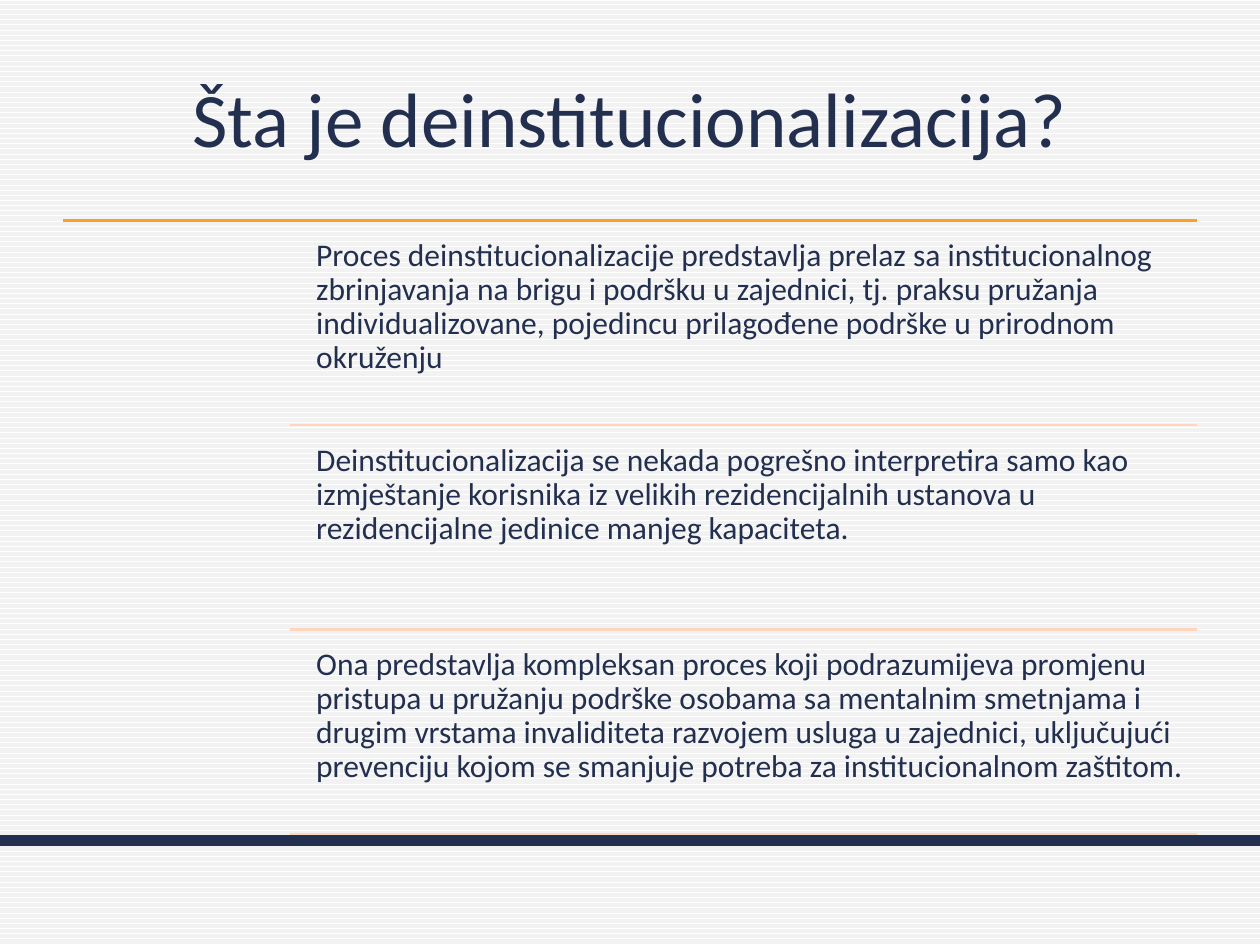
from dataclasses import dataclass

from lxml import etree
from pptx import Presentation
from pptx.dml.color import RGBColor
from pptx.enum.dml import MSO_PATTERN
from pptx.enum.shapes import MSO_CONNECTOR
from pptx.enum.text import MSO_ANCHOR, PP_ALIGN
from pptx.oxml.ns import qn
from pptx.util import Inches, Pt


@dataclass(frozen=True)
class Theme:
    font: str = "Calibri"
    title_size: float = 44
    body_size: float = 18
    navy: str = "232F4E"
    orange: str = "FDA023"
    peach: str = "FED6BD"
    stripe: str = "F2F2F2"
    paper: str = "FFFFFF"
    rule_width: float = 1.5
    footer_width: float = 6


THEME = Theme()

TITLE = "Šta je deinstitucionalizacija?"
STATEMENTS = [
    "Proces deinstitucionalizacije predstavlja prelaz sa institucionalnog "
    "zbrinjavanja na brigu i podršku u zajednici, tj. praksu pružanja "
    "individualizovane, pojedincu prilagođene podrške u prirodnom okruženju",
    "Deinstitucionalizacija se nekada pogrešno interpretira samo kao "
    "izmještanje korisnika iz velikih rezidencijalnih ustanova u "
    "rezidencijalne jedinice manjeg kapaciteta.",
    "Ona predstavlja kompleksan proces koji podrazumijeva promjenu pristupa "
    "u pružanju podrške osobama sa mentalnim smetnjama i drugim vrstama "
    "invaliditeta razvojem usluga u zajednici, uključujući prevenciju kojom "
    "se smanjuje potreba za institucionalnom zaštitom.",
]


def set_all(target, formats):
    for name, value in formats.items():
        setattr(target, name, value)


def write(frame, text, size, frame_format, paragraph_format):
    set_all(frame, {"word_wrap": True, **frame_format})
    paragraph = frame.paragraphs[0]
    set_all(paragraph, paragraph_format)
    run = paragraph.add_run()
    run.text = text
    set_all(run.font, {"name": THEME.font, "size": Pt(size)})
    run.font.color.rgb = RGBColor.from_string(THEME.navy)


def add_rule(slide, left, right, y, color, width):
    rule = slide.shapes.add_connector(MSO_CONNECTOR.STRAIGHT, left, y, right, y)
    rule.line.color.rgb = RGBColor.from_string(color)
    rule.line.width = Pt(width)
    # An empty effect list switches the shadow off
    etree.SubElement(rule._element.spPr, qn("a:effectLst"))


def paint_background(slide):
    fill = slide.background.fill
    fill.patterned()
    fill.pattern = MSO_PATTERN.DARK_HORIZONTAL
    fill.fore_color.rgb = RGBColor.from_string(THEME.stripe)
    fill.back_color.rgb = RGBColor.from_string(THEME.paper)


def place_title(slide, left, top, width, height):
    title = slide.shapes.title
    set_all(title, {"left": left, "top": top, "width": width, "height": height})
    write(title.text_frame, TITLE, THEME.title_size,
          {"vertical_anchor": MSO_ANCHOR.MIDDLE},
          {"alignment": PP_ALIGN.CENTER})


def place_statements(slide, left, top, width, height):
    right = left + width
    row_height = height / len(STATEMENTS)
    text_left = left + Inches(1.94)
    inset = Inches(0.07)
    frame_format = {f"margin_{side}": inset
                    for side in ("left", "top", "right", "bottom")}
    frame_format["vertical_anchor"] = MSO_ANCHOR.TOP
    paragraph_format = {"alignment": PP_ALIGN.LEFT, "line_spacing": 0.9}

    add_rule(slide, left, right, top, THEME.orange, THEME.rule_width)
    for row, statement in enumerate(STATEMENTS):
        row_top = int(top + row * row_height)
        box = slide.shapes.add_textbox(text_left, row_top + Inches(0.08),
                                       Inches(7.07), Inches(1.55))
        write(box.text_frame, statement, THEME.body_size,
              frame_format, paragraph_format)
        # Each row closes with a pale rule
        add_rule(slide, left + Inches(1.8), right, int(row_top + row_height),
                 THEME.peach, THEME.rule_width)


def main():
    deck = Presentation()
    set_all(deck, {"slide_width": Inches(10), "slide_height": Inches(7.5)})
    slide = deck.slides.add_slide(deck.slide_layouts.get_by_name("Title Only"))

    paint_background(slide)
    place_title(slide, Inches(0.5), Inches(0.3), Inches(9), Inches(1.25))
    place_statements(slide, Inches(0.5), Inches(1.75), Inches(9), Inches(4.87))
    # Footer bar across the whole slide
    add_rule(slide, 0, deck.slide_width, Inches(6.67),
             THEME.navy, THEME.footer_width)

    deck.save("out.pptx")


if __name__ == "__main__":
    main()
